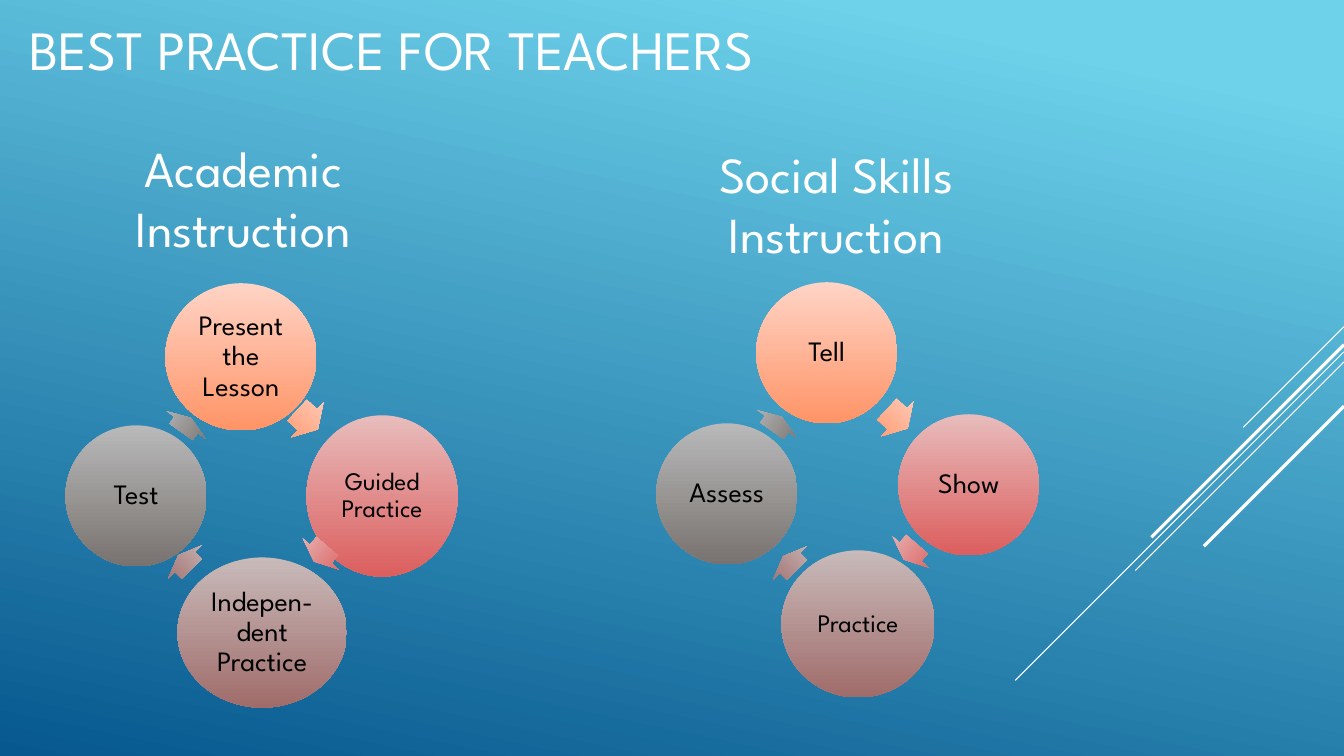
from dataclasses import dataclass

from pptx import Presentation
from pptx.dml.color import RGBColor
from pptx.dml.fill import FillFormat
from pptx.enum import shapes, text
from pptx.oxml import parse_xml
from pptx.oxml.ns import nsdecls
from pptx.slide import Slide
from pptx.util import Inches, Pt

FONT = "League Spartan"
WHITE = RGBColor(0xFF, 0xFF, 0xFF)
BLACK = RGBColor(0, 0, 0)
SKY = RGBColor(0x6E, 0xD2, 0xEB)
NAVY = RGBColor(0x06, 0x58, 0x8E)
ORANGE = (RGBColor(0xFF, 0xD4, 0xC6), RGBColor(0xFF, 0x94, 0x67))
RED = (RGBColor(0xE8, 0xBC, 0xBC), RGBColor(0xDC, 0x5E, 0x5E))
BROWN = (RGBColor(0xC8, 0xBA, 0xBA), RGBColor(0xA0, 0x6C, 0x6A))
GREY = (RGBColor(0xB9, 0xB9, 0xB9), RGBColor(0x78, 0x72, 0x70))
TONES = (ORANGE, RED, BROWN, GREY)

Box = tuple[float, float, float, float]
Tone = tuple[RGBColor, RGBColor]
Kind = shapes.MSO_SHAPE


@dataclass
class Step:
    label: str
    box: Box
    size: int = 20


@dataclass
class Cycle:
    head: str
    box: Box
    steps: list[Step]
    tips: list[tuple[float, float]]


@dataclass
class Arrow:
    kind: Kind
    width: float
    turn: float


@dataclass
class Ray:
    """A diagonal that falls to the left from the slide's right edge."""
    top: float
    reach: float
    weight: float = 0.75


EDGE = 13.33
ARROW_H = 0.47
ARROWS = [
    Arrow(Kind.RIGHT_ARROW, 0.28, 42.7),
    Arrow(Kind.LEFT_ARROW, 0.2, 310.9),
    Arrow(Kind.LEFT_ARROW, 0.19, 45.3),
    Arrow(Kind.RIGHT_ARROW, 0.17, 305.1),
]
RAYS = [Ray(3.24, 1), Ray(3.49, 3.26), Ray(3.59, 2.07),
        Ray(3.42, 1.91, 2.25), Ray(4.03, 1.39, 2.25)]
CYCLES = [
    Cycle("Social Skills Instruction", (6.21, 1.37, 4.17, 1.31), [
        Step("Tell", (7.5, 2.8, 1.4, 1.4)),
        Step("Show", (8.91, 4.11, 1.4, 1.4)),
        Step("Practice", (7.75, 5.46, 1.52, 1.46), 18),
        Step("Assess", (6.51, 4.2, 1.4, 1.4)),
    ], [(8.76, 3.92), (8.93, 5.24), (7.74, 5.35), (7.62, 3.97)]),
    Cycle("Academic Instruction", (0.33, 1.31, 4.17, 1.31), [
        Step("Present the Lesson", (1.64, 2.81, 1.5, 1.46)),
        Step("Guided Practice", (3.04, 4.12, 1.5, 1.6), 18),
        Step("Indepen-dent Practice", (1.76, 5.53, 1.68, 1.49)),
        Step("Test", (0.65, 4.22, 1.4, 1.4)),
    ], [(2.91, 3.93), (3.08, 5.26), (1.74, 5.34), (1.76, 3.98)]),
]


def blend(fill: FillFormat, tone: Tone, angle: float, start: float = 0) -> None:
    fill.gradient()
    fill.gradient_angle = 360 - angle
    for stop, color, place in zip(fill.gradient_stops, tone, (start, 1)):
        stop.color.rgb = color
        stop.position = place


def write(frame, words: str, size: float, color: RGBColor, align):
    frame.text = words
    frame.word_wrap = True
    para = frame.paragraphs[0]
    para.alignment = align
    para.font.name = FONT
    para.font.size = Pt(size)
    para.font.color.rgb = color
    return para


def add_form(slide: Slide, kind: Kind, box: Box, tone: Tone):
    form = slide.shapes.add_shape(kind, *map(Inches, box))
    form.shadow.inherit = False
    form.line.fill.background()
    blend(form.fill, tone, 90)
    return form


def add_step(slide: Slide, step: Step, tone: Tone) -> None:
    frame = add_form(slide, Kind.OVAL, step.box, tone).text_frame
    frame.margin_left = frame.margin_right = 0
    frame.margin_top = frame.margin_bottom = 0
    frame.vertical_anchor = text.MSO_ANCHOR.MIDDLE
    para = write(frame, step.label, step.size, BLACK, text.PP_ALIGN.CENTER)
    para.line_spacing = 0.9
    para.space_after = Pt(step.size * 0.35)


def add_arrow(slide: Slide, arrow: Arrow, spot: tuple[float, float], tone: Tone) -> None:
    form = add_form(slide, arrow.kind, (*spot, arrow.width, ARROW_H), tone)
    form.rotation = arrow.turn
    form.adjustments[0] = 0.6
    form.adjustments[1] = 0.5


def add_cycle(slide: Slide, cycle: Cycle) -> None:
    for step, arrow, spot, tone in zip(cycle.steps, ARROWS, cycle.tips, TONES):
        add_step(slide, step, tone)
        add_arrow(slide, arrow, spot, tone)
    frame = slide.shapes.add_textbox(*map(Inches, cycle.box)).text_frame
    write(frame, cycle.head, 36, WHITE, text.PP_ALIGN.CENTER)
    frame.auto_size = text.MSO_AUTO_SIZE.SHAPE_TO_FIT_TEXT


def add_ray(slide: Slide, ray: Ray) -> None:
    ends = (EDGE, ray.top, EDGE - ray.reach, ray.top + ray.reach)
    line = slide.shapes.add_connector(shapes.MSO_CONNECTOR.STRAIGHT, *map(Inches, ends))
    line.line.color.rgb = WHITE
    line.line.width = Pt(ray.weight)
    line._element.spPr.append(parse_xml(f"<a:effectLst {nsdecls('a')}/>"))


def add_title(slide: Slide) -> None:
    title = slide.shapes.title
    title.left, title.top, title.width, title.height = map(Inches, (0.19, 0.17, 8.25, 1.17))
    frame = title.text_frame
    frame.vertical_anchor = text.MSO_ANCHOR.TOP
    frame.auto_size = text.MSO_AUTO_SIZE.NONE
    para = write(frame, "BEST PRACTICE FOR TEACHERS", 39.6, WHITE, text.PP_ALIGN.LEFT)
    para.line_spacing = 0.9


def main() -> None:
    deck = Presentation()
    deck.slide_width, deck.slide_height = Inches(EDGE), Inches(7.5)
    slide = deck.slides.add_slide(deck.slide_layouts[5])
    blend(slide.background.fill, (SKY, NAVY), 102, 0.1)
    for ray in RAYS:
        add_ray(slide, ray)
    add_title(slide)
    for cycle in CYCLES:
        add_cycle(slide, cycle)
    deck.save("out.pptx")


if __name__ == "__main__":
    main()
